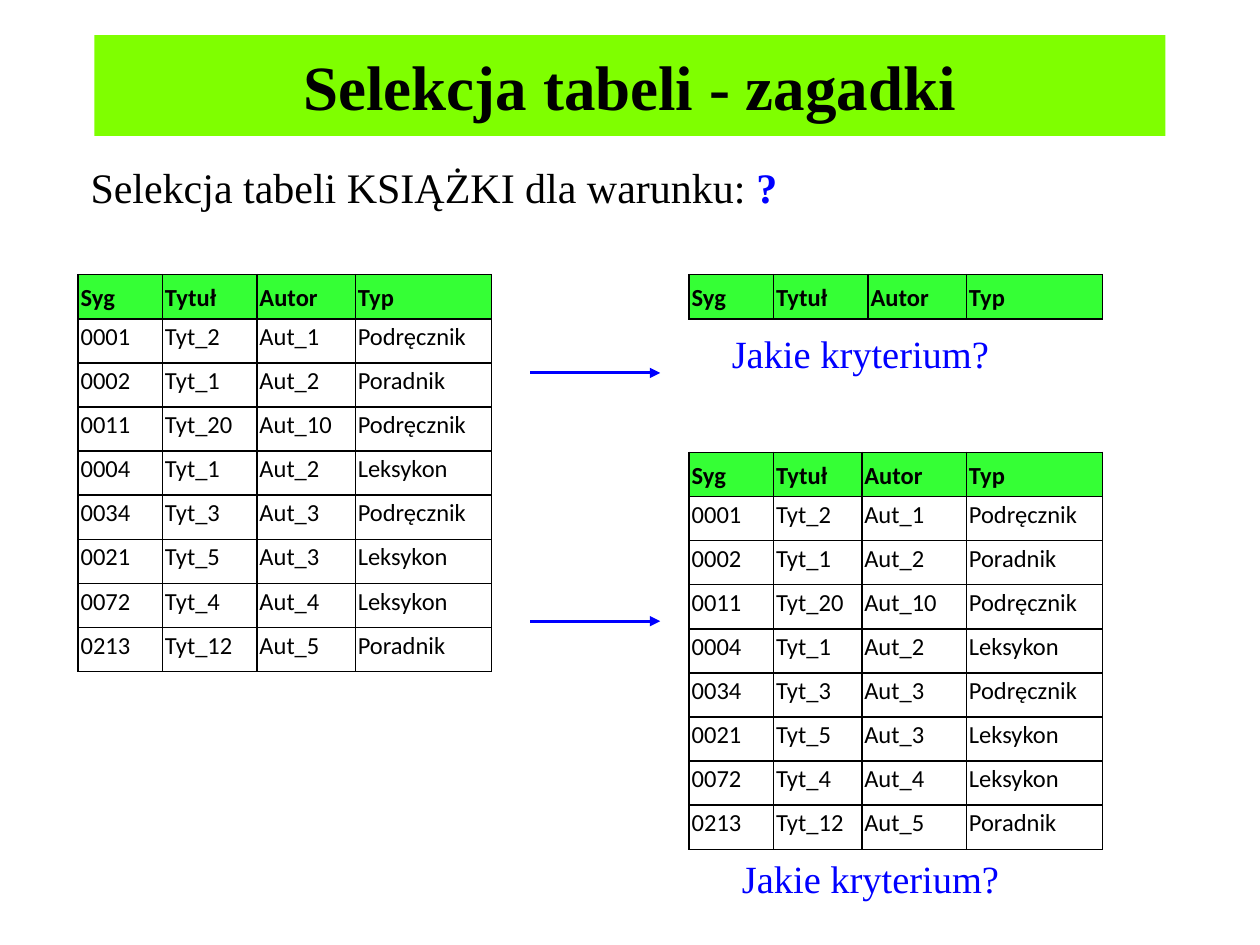
from dataclasses import dataclass

from lxml import etree
from pptx import Presentation
from pptx.dml.color import RGBColor
from pptx.enum.shapes import MSO_CONNECTOR, MSO_SHAPE
from pptx.enum.text import MSO_ANCHOR, MSO_AUTO_SIZE, PP_ALIGN
from pptx.oxml.ns import qn
from pptx.util import Inches, Pt

# The slide is a grid of 100 columns by 75 rows
SLIDE_WIDTH, SLIDE_HEIGHT = Inches(10), Inches(7.5)
COLUMN, ROW = SLIDE_WIDTH / 100, SLIDE_HEIGHT / 75

SERIF, SANS = "Times New Roman", "Calibri"
BLACK, BLUE, LIME, GREEN = "000000", "0000FF", "7FFF00", "35FF35"

HEADER = ("Syg", "Tytuł", "Autor", "Typ")
BOOKS = (
    ("0001", "Tyt_2", "Aut_1", "Podręcznik"),
    ("0002", "Tyt_1", "Aut_2", "Poradnik"),
    ("0011", "Tyt_20", "Aut_10", "Podręcznik"),
    ("0004", "Tyt_1", "Aut_2", "Leksykon"),
    ("0034", "Tyt_3", "Aut_3", "Podręcznik"),
    ("0021", "Tyt_5", "Aut_3", "Leksykon"),
    ("0072", "Tyt_4", "Aut_4", "Leksykon"),
    ("0213", "Tyt_12", "Aut_5", "Poradnik"),
)
TABLE_ROW = 3.5


@dataclass(frozen=True)
class BookTable:
    left: float
    top: float
    widths: tuple[float, ...]
    records: tuple = ()


@dataclass(frozen=True)
class Question:
    left: float
    top: float


@dataclass(frozen=True)
class Arrow:
    left: float
    right: float
    level: float


TABLES = (
    BookTable(6.2, 21.8, (6.7, 7.5, 7.8, 10.8), BOOKS),
    BookTable(54.7, 35.9, (6.7, 7, 8.3, 10.8), BOOKS),
    BookTable(54.7, 21.8, (6.7, 7.5, 7.8, 10.8)),
)
ARROWS = (Arrow(42.1, 52.4, 29.6), Arrow(42.1, 52.4, 49.3))
QUESTIONS = (Question(57.1, 25.7), Question(57.9, 67.4))


def across(columns: float) -> int:
    return round(columns * COLUMN)


def down(rows: float) -> int:
    return round(rows * ROW)


def area(left: float, top: float, width: float, height: float) -> tuple[int, ...]:
    return across(left), down(top), across(width), down(height)


def color(value: str) -> RGBColor:
    return RGBColor.from_string(value)


def style(span, size: float, font: str, ink: str = BLACK, bold: bool = False) -> None:
    span.font.size = Pt(size)
    span.font.name = font
    span.font.color.rgb = color(ink)
    span.font.bold = bold


def add_title(page) -> None:
    box = page.shapes.add_shape(MSO_SHAPE.RECTANGLE, *area(7.5, 2.8, 85, 8))
    box.shadow.inherit = False
    box.fill.solid()
    box.fill.fore_color.rgb = color(LIME)
    box.line.fill.background()
    box.text_frame.text = "Selekcja tabeli - zagadki"
    box.text_frame.vertical_anchor = MSO_ANCHOR.MIDDLE
    para = box.text_frame.paragraphs[0]
    para.alignment = PP_ALIGN.CENTER
    style(para.runs[0], 36, SERIF, bold=True)


def add_condition(page) -> None:
    box = page.shapes.add_textbox(*area(6.2, 12.3, 87.5, 9.3))
    box.text_frame.word_wrap = True
    para = box.text_frame.paragraphs[0]
    para.space_before = Pt(4)
    para.text = "Selekcja tabeli KSIĄŻKI dla warunku: "
    style(para.runs[0], 24, SERIF)
    mark = para.add_run()
    mark.text = "?"
    style(mark, 24, SERIF, BLUE, bold=True)


def add_borders(cell) -> None:
    properties = cell._tc.get_or_add_tcPr()
    for position, side in enumerate(("lnL", "lnR", "lnT", "lnB")):
        line = etree.Element(qn(f"a:{side}"), w=str(Pt(1)))
        fill = etree.SubElement(line, qn("a:solidFill"))
        etree.SubElement(fill, qn("a:srgbClr"), val=BLACK)
        properties.insert(position, line)


def fill_cell(cell, text: str, is_header: bool) -> None:
    cell.margin_left = cell.margin_right = Inches(0.02)
    cell.margin_top, cell.margin_bottom = Inches(0.01), 0
    cell.vertical_anchor = MSO_ANCHOR.MIDDLE if is_header else MSO_ANCHOR.TOP
    if is_header:
        cell.fill.solid()
        cell.fill.fore_color.rgb = color(GREEN)
    else:
        cell.fill.background()
    add_borders(cell)
    cell.text_frame.text = text
    para = cell.text_frame.paragraphs[0]
    para.line_spacing = 1.07
    para.space_after = Pt(8)
    style(para.runs[0], 14, SANS, bold=is_header)


def add_book_table(page, books: BookTable) -> None:
    lines = (HEADER, *books.records)
    place = area(books.left, books.top, sum(books.widths), TABLE_ROW * len(lines))
    table = page.shapes.add_table(len(lines), len(HEADER), *place).table
    table.first_row = table.horz_banding = False
    for column, width in zip(table.columns, books.widths):
        column.width = across(width)
    for row_number, line in enumerate(lines):
        table.rows[row_number].height = down(TABLE_ROW)
        for column_number, text in enumerate(line):
            fill_cell(table.cell(row_number, column_number), text, row_number == 0)


def add_arrow(page, arrow: Arrow) -> None:
    level = down(arrow.level)
    connector = page.shapes.add_connector(
        MSO_CONNECTOR.STRAIGHT, across(arrow.left), level, across(arrow.right), level
    )
    connector.line.color.rgb = color(BLUE)
    connector.line.width = Pt(1.75)
    etree.SubElement(connector.line._get_or_add_ln(), qn("a:tailEnd"), type="triangle")
    etree.SubElement(connector._element.spPr, qn("a:effectLst"))


def add_question(page, question: Question) -> None:
    box = page.shapes.add_textbox(*area(question.left, question.top, 22.7, 4.7))
    box.text_frame.word_wrap = False
    box.text_frame.auto_size = MSO_AUTO_SIZE.SHAPE_TO_FIT_TEXT
    box.text_frame.text = "Jakie kryterium?"
    style(box.text_frame.paragraphs[0].runs[0], 22, SERIF, BLUE)


def main() -> None:
    deck = Presentation()
    deck.slide_width, deck.slide_height = SLIDE_WIDTH, SLIDE_HEIGHT
    page = deck.slides.add_slide(deck.slide_layouts[6])

    # Heading and the condition to guess
    add_title(page)
    add_condition(page)

    # Source table, arrows and the two selections
    for books in TABLES:
        add_book_table(page, books)
    for arrow in ARROWS:
        add_arrow(page, arrow)

    # Questions under the selections
    for question in QUESTIONS:
        add_question(page, question)

    deck.save("out.pptx")


if __name__ == "__main__":
    main()
